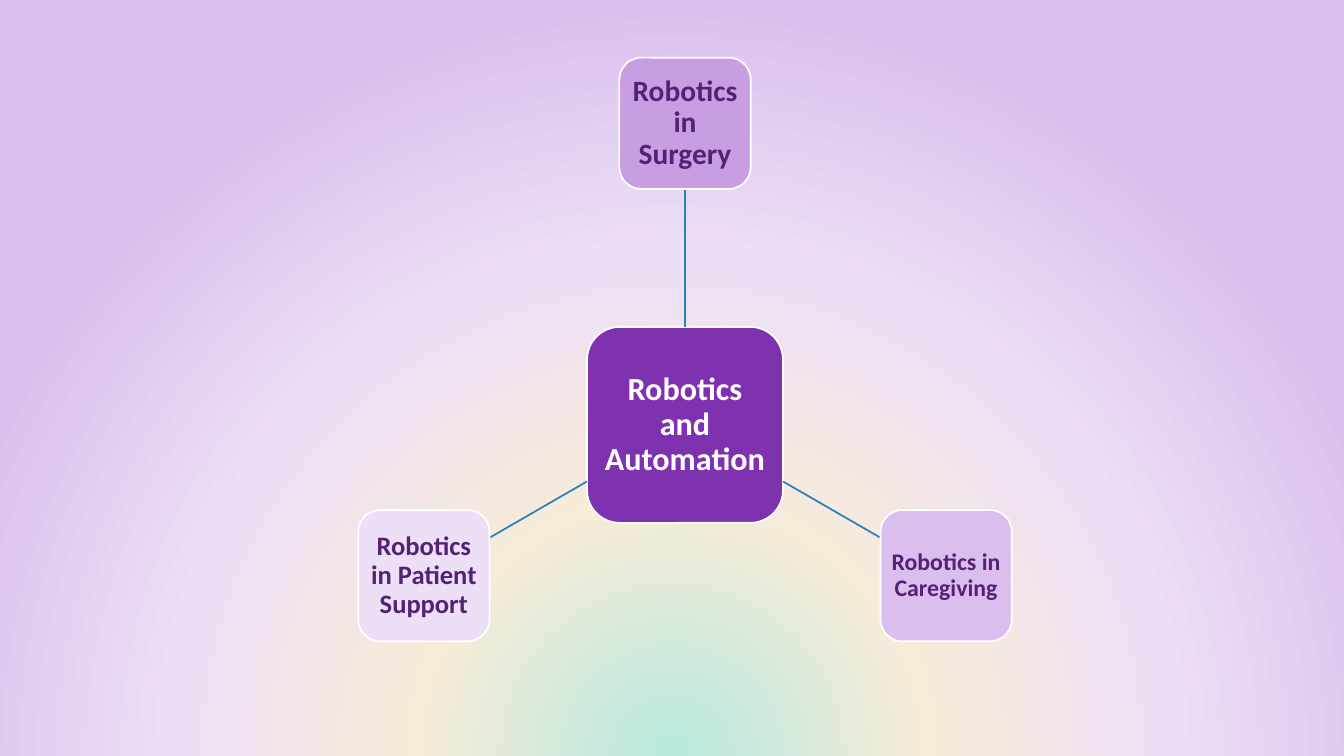
import math

import pptx
import pptx.dml.color
import pptx.enum.shapes
import pptx.enum.text
import pptx.oxml
import pptx.oxml.ns
import pptx.util

Pt = pptx.util.Pt

# Content
COLORS = {
    "hub": "7E32B0", "surgery": "C89EE3", "caregiving": "DABEED", "support": "EDDFF6",
    "white": "FFFFFF", "dark": "542176", "spoke": "2683BF",
}
HUB = ("Robotics and Automation", 23)
TOPICS = [  # text, font size, fill, inset, angle in degrees
    ("Robotics in Surgery", 21, "surgery", 4.2, -90),
    ("Robotics in Caregiving", 17, "caregiving", 3.4, 30),
    ("Robotics in Patient Support", 19, "support", 3.8, 150),
]
GRADIENT = [(0, "B7EADE"), (33, "F7EBD9"), (65, "EDDFF6"), (100, "DABEED")]

# Layout
SLIDE_W, SLIDE_H = 960, 540
CENTER_X, CENTER_Y = 489.3, 303.5
HUB_SIZE, TOPIC_SIZE, RADIUS = 140, 93.8, 215.4


def rgb(name):
    return pptx.dml.color.RGBColor.from_string(COLORS[name])


def add_text(tf, text, size, color, inset):
    tf.word_wrap = True
    tf.vertical_anchor = pptx.enum.text.MSO_ANCHOR.MIDDLE
    tf.margin_left = tf.margin_right = tf.margin_top = tf.margin_bottom = Pt(inset)
    p = tf.paragraphs[0]
    p.alignment = pptx.enum.text.PP_ALIGN.CENTER
    p.line_spacing = 0.9
    r = p.add_run()
    r.text = text
    r.font.name = "Calibri"
    r.font.size = Pt(size)
    r.font.bold = True
    r.font.color.rgb = rgb(color)


def add_node(s, x, y, side, text, size, fill, color, inset):
    sp = s.shapes.add_shape(
        pptx.enum.shapes.MSO_SHAPE.ROUNDED_RECTANGLE,
        Pt(x - side / 2), Pt(y - side / 2), Pt(side), Pt(side))
    sp.shadow.inherit = False
    sp.fill.solid()
    sp.fill.fore_color.rgb = rgb(fill)
    sp.line.color.rgb = rgb("white")
    sp.line.width = Pt(1.25)
    add_text(sp.text_frame, text, size, color, inset)


def add_spoke(s, dx, dy):
    # Distance along the ray from a square's centre to its edge
    edge = 0.5 / max(abs(dx), abs(dy))
    start, end = HUB_SIZE * edge, RADIUS - TOPIC_SIZE * edge
    line = s.shapes.add_connector(
        pptx.enum.shapes.MSO_CONNECTOR.STRAIGHT,
        Pt(CENTER_X + start * dx), Pt(CENTER_Y + start * dy),
        Pt(CENTER_X + end * dx), Pt(CENTER_Y + end * dy))
    line.line.color.rgb = rgb("spoke")
    line.line.width = Pt(1.25)
    sp_pr = line._element.spPr
    sp_pr.append(sp_pr.makeelement(pptx.oxml.ns.qn("a:effectLst"), {}))


def set_background(s):
    s.background.fill.solid()
    stops = "".join(f'<a:gs pos="{pos * 1000}"><a:srgbClr val="{color}"/></a:gs>'
                    for pos, color in GRADIENT)
    gradient = pptx.oxml.parse_xml(
        f'<a:gradFill {pptx.oxml.ns.nsdecls("a")} rotWithShape="1"><a:gsLst>{stops}</a:gsLst>'
        '<a:path path="circle"><a:fillToRect l="50000" t="130000" r="50000" b="-30000"/>'
        '</a:path></a:gradFill>')
    bg_pr = s._element.cSld.bg.bgPr
    bg_pr.replace(bg_pr[0], gradient)


def main():
    prs = pptx.Presentation()
    prs.slide_width, prs.slide_height = Pt(SLIDE_W), Pt(SLIDE_H)
    s = prs.slides.add_slide(prs.slide_layouts[6])
    set_background(s)

    # Hub
    add_node(s, CENTER_X, CENTER_Y, HUB_SIZE, *HUB, fill="hub", color="white", inset=4.6)

    # Topics around the hub
    for text, size, fill, inset, angle in TOPICS:
        dx, dy = math.cos(math.radians(angle)), math.sin(math.radians(angle))
        add_spoke(s, dx, dy)
        add_node(s, CENTER_X + RADIUS * dx, CENTER_Y + RADIUS * dy, TOPIC_SIZE,
                 text, size, fill=fill, color="dark", inset=inset)

    prs.save("out.pptx")


if __name__ == "__main__":
    main()
